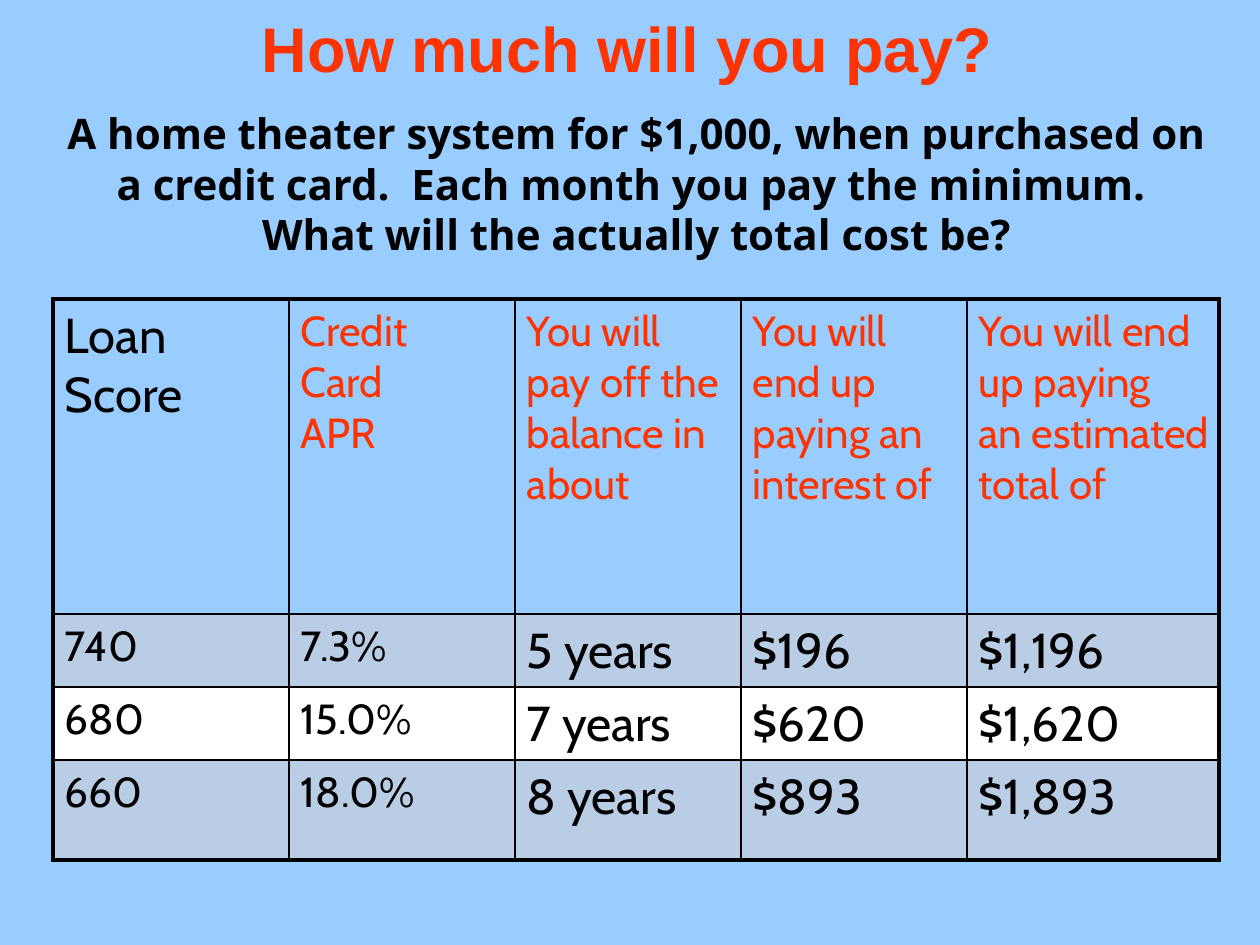
import pptx
import pptx.util
import pptx.dml.color
import pptx.enum.text
import pptx.oxml.ns
import lxml.etree

PX = 914400 / 126
COLORS = {"sky": "99CCFF", "accent": "FF3300", "ink": "000000",
          "band": "B9CDE5", "plain": "FFFFFF"}
CENTER = pptx.enum.text.PP_ALIGN.CENTER
MIDDLE = pptx.enum.text.MSO_ANCHOR.MIDDLE

TITLE = "How much will you pay?"
QUESTION = [
    "A home theater system for $1,000, when purchased on a credit card.  "
    "Each month you pay the minimum. ",
    "What will the actually total cost be?",
]
HEADERS = ["Loan\nScore", "Credit\nCard\nAPR",
           "You will pay off the balance in about",
           "You will end up paying an interest of",
           "You will end up paying  an estimated total of"]
SCORES = [["740", "7.3%", "5 years", "$196", "$1,196"],
          ["680", "15.0%", "7 years", "$620", "$1,620"],
          ["660", "18.0%", "8 years", "$893", "$1,893"]]
COLUMN_WIDTHS = [236, 226, 226, 226, 252]
ROW_HEIGHTS = [315, 73, 73, 100]
INDENT = 5


def emu(px):
    return pptx.util.Emu(round(px * PX))


def color(name):
    return pptx.dml.color.RGBColor.from_string(COLORS[name])


def set_margins(item, left, top, right, bottom):
    item.margin_left, item.margin_top = emu(left), emu(top)
    item.margin_right, item.margin_bottom = emu(right), emu(bottom)


def style_para(para, font, size, tint, bold=False, align=None, indent=0):
    para.font.name = font
    para.font.size = pptx.util.Pt(size)
    para.font.bold = bold
    para.font.color.rgb = color(tint)
    if align is not None:
        para.alignment = align
    if indent:
        properties = para._p.get_or_add_pPr()
        properties.set("marL", str(emu(indent)))
        properties.set("indent", "0")


def set_borders(cell, widths):
    """Draw the cell edges; widths gives points for L, R, T and B."""
    properties = cell._tc.get_or_add_tcPr()
    for side, width in widths.items():
        line = lxml.etree.SubElement(
            properties, pptx.oxml.ns.qn(f"a:ln{side}"),
            w=str(pptx.util.Pt(width)))
        fill = lxml.etree.SubElement(line, pptx.oxml.ns.qn("a:solidFill"))
        lxml.etree.SubElement(fill, pptx.oxml.ns.qn("a:srgbClr"),
                              val=COLORS["ink"])


def add_title(page, left, top, width, height):
    box = page.shapes.title
    box.left, box.top, box.width, box.height = map(
        emu, (left, top, width, height))
    frame = box.text_frame
    frame.text = TITLE
    frame.vertical_anchor = MIDDLE
    set_margins(frame, 13, 6, 18, 6)
    style_para(frame.paragraphs[0], "Arial", 36, "accent", True, CENTER)


def add_question(page, left, top, width, height):
    box = page.shapes.add_textbox(*map(emu, (left, top, width, height)))
    frame = box.text_frame
    frame.word_wrap = True
    frame.vertical_anchor = MIDDLE
    set_margins(frame, 0, 0, 5, 0)
    frame.text = "\n".join(QUESTION)
    for para in frame.paragraphs:
        style_para(para, "Open Sans", 24, "ink", True, CENTER, INDENT)


def add_cost_table(page, left, top):
    rows = [HEADERS] + SCORES
    last_row, last_column = len(rows) - 1, len(HEADERS) - 1
    table = page.shapes.add_table(
        len(rows), len(HEADERS), emu(left), emu(top),
        emu(sum(COLUMN_WIDTHS)), emu(sum(ROW_HEIGHTS))).table
    table.first_row = table.horz_banding = False
    for column, width in zip(table.columns, COLUMN_WIDTHS):
        column.width = emu(width)
    for row, height in zip(table.rows, ROW_HEIGHTS):
        row.height = emu(height)

    for r, texts in enumerate(rows):
        for c, text in enumerate(texts):
            cell = table.cell(r, c)
            set_margins(cell, 7, 7, 7, 7)
            # Thick lines on the outside of the table, thin ones inside
            edges = {"L": c == 0, "R": c == last_column,
                     "T": r == 0, "B": r == last_row}
            set_borders(cell, {side: 2.25 if outer else 1
                               for side, outer in edges.items()})
            if r == 0:
                cell.fill.background()
                size, tint = (28, "ink") if c == 0 else (24, "accent")
            else:
                cell.fill.solid()
                cell.fill.fore_color.rgb = color("band" if r % 2 else "plain")
                size, tint = (24 if c < 2 else 28), "ink"
            cell.text_frame.text = text
            for para in cell.text_frame.paragraphs:
                style_para(para, "Cabin", size, tint, indent=INDENT)


def main():
    deck = pptx.Presentation()
    deck.slide_width, deck.slide_height = emu(1260), emu(945)
    page = deck.slides.add_slide(deck.slide_layouts[5])
    page.background.fill.solid()
    page.background.fill.fore_color.rgb = color("sky")
    add_title(page, 63, 0, 1134, 95)
    add_question(page, 53, 103, 1167, 161)
    add_cost_table(page, 53, 299)
    deck.save("out.pptx")


if __name__ == "__main__":
    main()
